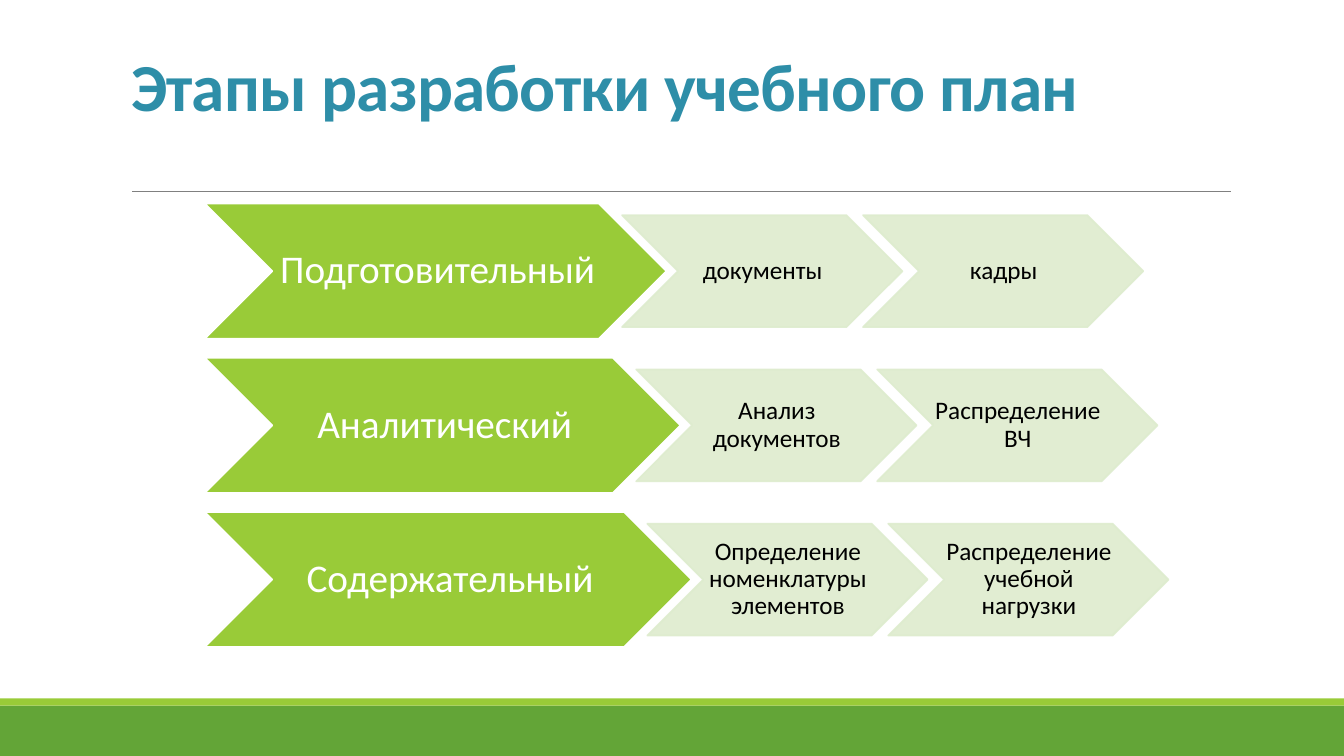
from lxml.etree import SubElement
from pptx import Presentation
from pptx.dml.color import RGBColor
from pptx.enum.shapes import MSO_CONNECTOR as CONN, MSO_SHAPE as SHAPE
from pptx.enum.text import MSO_ANCHOR as ANCHOR, MSO_AUTO_SIZE as AUTOSIZE, PP_ALIGN as ALIGN
from pptx.oxml.ns import qn
from pptx.util import Inches, Pt

W, H = 13.33, 7.5
FONT = "Calibri"
GREEN, LIME, PALE = "63A537", "99CB38", "DEECCE"
WHITE, BLACK, GREY, TEAL = "FFFFFF", "000000", "808080", "2E8EA8"

# Stage name, width of its chevron, steps that follow
STAGES = [
    ("Подготовительный", 4.58, ["документы", "кадры"]),
    ("Аналитический", 4.72, ["Анализ документов", "Распределение ВЧ"]),
    ("Содержательный", 4.83, ["Определение номенклатуры элементов",
                              "Распределение учебной нагрузки"]),
]
STAGE_H, STEP_W, STEP_H = 1.34, 2.78, 1.11
STAGE_INSET, STEP_INSET = 0.04, 0.01
ROW_PITCH = 1.53
STAGE_OVERLAP, STEP_OVERLAP = 0.44, 0.39


def color(hex_string):
    return RGBColor.from_string(hex_string)


def format_text(tf, size, hex_string, align, spacing, bold=False):
    p = tf.paragraphs[0]
    p.alignment, p.line_spacing = align, spacing
    font = p.runs[0].font
    font.name, font.size, font.bold = FONT, Pt(size), bold
    font.color.rgb = color(hex_string)


def add_filled(slide, kind, box, fill):
    sp = slide.shapes.add_shape(kind, *map(Inches, box))
    sp.shadow.inherit = False
    sp.fill.solid()
    sp.fill.fore_color.rgb = color(fill)
    sp.line.fill.background()
    return sp


def add_chevron(slide, box, text, size, inset, fill, line, text_color, alpha=None):
    sp = add_filled(slide, SHAPE.CHEVRON, box, fill)
    sp.line.color.rgb = color(line)
    sp.line.width = Pt(1.25)
    if alpha:
        for clr in sp._element.spPr.iter(qn("a:srgbClr")):
            SubElement(clr, qn("a:alpha"), val=str(alpha * 1000))
    tf = sp.text_frame
    tf.text, tf.word_wrap = text, True
    tf.vertical_anchor = ANCHOR.MIDDLE
    tf.margin_left, tf.margin_right = Inches(inset), 0
    tf.margin_top = tf.margin_bottom = Inches(inset / 2)
    format_text(tf, size, text_color, ALIGN.CENTER, 0.9)


def add_frame(slide):
    """Footer bands and the rule under the title."""
    add_filled(slide, SHAPE.RECTANGLE, (0, 7, W, H - 7), GREEN)
    add_filled(slide, SHAPE.RECTANGLE, (0, 6.93, W, 0.07), LIME)
    rule = slide.shapes.add_connector(
        CONN.STRAIGHT, Inches(1.31), Inches(1.9), Inches(12.21), Inches(1.9))
    rule.line.color.rgb = color(GREY)
    rule.line.width = Pt(0.5)
    SubElement(rule._element.spPr, qn("a:effectLst"))


def add_title(slide, box, text):
    title = slide.shapes.title
    title.left, title.top, title.width, title.height = map(Inches, box)
    tf = title.text_frame
    tf.text, tf.word_wrap = text, True
    tf.auto_size = AUTOSIZE.NONE
    tf.vertical_anchor = ANCHOR.BOTTOM
    format_text(tf, 48, TEAL, ALIGN.LEFT, 0.85, bold=True)
    tf.paragraphs[0].runs[0].font._element.set("spc", "-50")


def add_stage_row(slide, left, top, name, width, steps):
    """One stage chevron followed by its smaller step chevrons."""
    add_chevron(slide, (left, top, width, STAGE_H), name, 28, STAGE_INSET,
                LIME, WHITE, WHITE)
    x = left + width - STAGE_OVERLAP
    y = top + (STAGE_H - STEP_H) / 2
    for step in steps:
        add_chevron(slide, (x, y, STEP_W, STEP_H), step, 18, STEP_INSET,
                    PALE, PALE, BLACK, alpha=90)
        x += STEP_W - STEP_OVERLAP


def main():
    prs = Presentation()
    prs.slide_width, prs.slide_height = Inches(W), Inches(H)
    slide = prs.slides.add_slide(prs.slide_layouts[5])
    add_frame(slide)
    add_title(slide, (1.2, 0.31, 11, 0.98), "Этапы разработки учебного план")
    for row, stage in enumerate(STAGES):
        add_stage_row(slide, 2.03, 2.02 + row * ROW_PITCH, *stage)
    prs.save("out.pptx")


if __name__ == "__main__":
    main()
